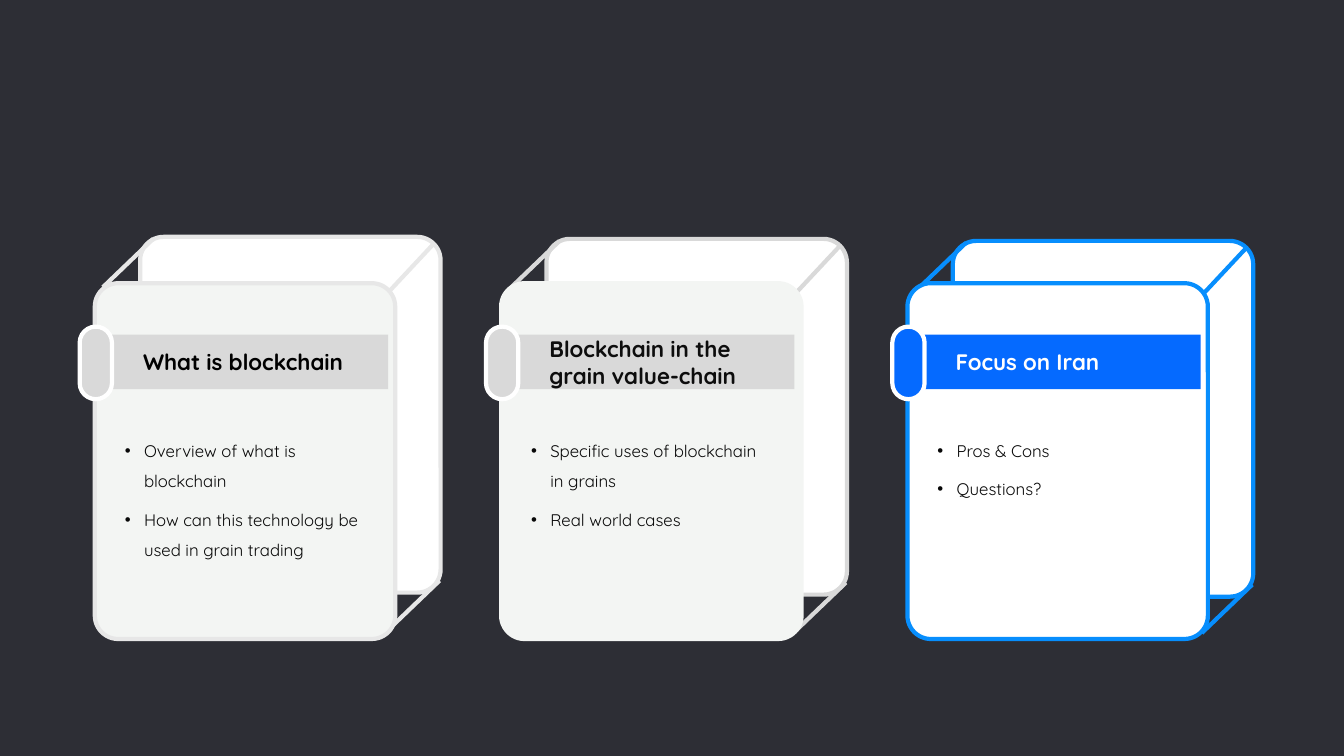
from dataclasses import dataclass

from lxml import etree
from pptx import Presentation
from pptx.dml.color import RGBColor
from pptx.enum.shapes import MSO_CONNECTOR, MSO_SHAPE
from pptx.enum.text import MSO_ANCHOR, MSO_AUTO_SIZE, PP_ALIGN
from pptx.oxml.ns import qn
from pptx.util import Inches, Pt

RECT = MSO_SHAPE.RECTANGLE
ROUNDED = MSO_SHAPE.ROUNDED_RECTANGLE
STRAIGHT = MSO_CONNECTOR.STRAIGHT
MIDDLE = MSO_ANCHOR.MIDDLE
GROW = MSO_AUTO_SIZE.SHAPE_TO_FIT_TEXT
LEFT = PP_ALIGN.LEFT

BACKGROUND = RGBColor(0x2D, 0x2E, 0x35)
WHITE = RGBColor(0xFF, 0xFF, 0xFF)
BLACK = RGBColor(0x00, 0x00, 0x00)
NEAR_BLACK = RGBColor(0x0D, 0x0D, 0x0D)
BODY_TEXT = RGBColor(0x08, 0x08, 0x08)
PALE = RGBColor(0xF3, 0xF5, 0xF3)
LIGHT_GREY = RGBColor(0xE7, 0xE7, 0xE7)
GREY = RGBColor(0xD9, 0xD9, 0xD9)
SKY_BLUE = RGBColor(0x07, 0x8E, 0xFD)
BLUE = RGBColor(0x05, 0x6A, 0xFF)

FONT = "Quicksand"
CARD_LEFT, CARD_TOP, CARD_PITCH = 0.94, 2.81, 4.03
CARD_W, CARD_H = 2.98, 3.53
BACK_DX = 0.45
# Depth edges, relative to the back panel
DEPTH_EDGES = [(-0.37, 0.5, 0.13, 0.02),
               (2.48, 0.53, 2.91, 0.07),
               (2.47, 3.89, 2.97, 3.41)]


@dataclass
class Card:
    title: str
    bullets: list
    back_top: float
    back_line: RGBColor
    front_fill: RGBColor
    front_line: RGBColor
    accent: RGBColor
    title_color: RGBColor
    title_size: tuple
    body_size: tuple


CARDS = [
    Card("What is blockchain",
         ["Overview of what is blockchain",
          "How can this technology be used in grain trading"],
         2.35, LIGHT_GREY, PALE, LIGHT_GREY, GREY, BLACK,
         (2.45, 0.37), (2.52, 1.36)),
    Card("Blockchain in the grain value-chain",
         ["Specific uses of blockchain in grains", "Real world cases"],
         2.37, GREY, PALE, PALE, GREY, NEAR_BLACK,
         (2.39, 0.64), (2.57, 1.06)),
    Card("Focus on Iran",
         ["Pros & Cons", "Questions?"],
         2.39, SKY_BLUE, WHITE, SKY_BLUE, BLUE, WHITE,
         (2.09, 0.37), (2.26, 0.75)),
]


def add_box(s, kind, x, y, w, h, fill, line=None, radius=None):
    sp = s.shapes.add_shape(kind, Inches(x), Inches(y), Inches(w), Inches(h))
    sp.shadow.inherit = False
    sp.fill.solid()
    sp.fill.fore_color.rgb = fill
    if line is None:
        sp.line.fill.background()
    else:
        sp.line.color.rgb = line
        sp.line.width = Pt(3)
    if radius is not None:
        sp.adjustments[0] = radius


def add_edge(s, x1, y1, x2, y2, color):
    edge = s.shapes.add_connector(STRAIGHT, Inches(x1), Inches(y1),
                                  Inches(x2), Inches(y2))
    edge.line.color.rgb = color
    edge.line.width = Pt(3)
    etree.SubElement(edge._element.spPr, qn("a:effectLst"))


def add_text(s, x, y, w, h, lines, size, color, bold=False, bullets=False):
    sp = s.shapes.add_textbox(Inches(x), Inches(y), Inches(w), Inches(h))
    tf = sp.text_frame
    tf.word_wrap = True
    tf.auto_size = GROW
    if not bullets:
        tf.vertical_anchor = MIDDLE
    for i, line in enumerate(lines):
        p = tf.add_paragraph() if i else tf.paragraphs[0]
        p.text = line
        p.alignment = LEFT
        p.font.name = FONT
        p.font.size = Pt(size)
        p.font.bold = bold
        p.font.color.rgb = color
        if bullets:
            add_bullet(p)


def add_bullet(p):
    p.line_spacing = 1.5
    p.space_after = Pt(6)
    pPr = p._p.get_or_add_pPr()
    pPr.set("marL", str(Inches(0.19)))
    pPr.set("indent", str(-Inches(0.19)))
    bullet_font = etree.Element(qn("a:buFont"), typeface="Arial")
    bullet = etree.Element(qn("a:buChar"), char="•")
    spacing_after = pPr.find(qn("a:spcAft"))
    spacing_after.addnext(bullet_font)
    bullet_font.addnext(bullet)


def add_card(s, x, y, card):
    # Back panel and depth edges
    back_x, back_y = x + BACK_DX, card.back_top
    add_box(s, ROUNDED, back_x, back_y, CARD_W, CARD_H, WHITE,
            card.back_line, 0.078)
    for x1, y1, x2, y2 in DEPTH_EDGES:
        add_edge(s, back_x + x1, back_y + y1, back_x + x2, back_y + y2,
                 card.back_line)

    # Front panel and title band
    add_box(s, ROUNDED, x, y, CARD_W, CARD_H, card.front_fill,
            card.front_line, 0.078)
    add_box(s, RECT, x + 0.15, y + 0.51, 2.76, 0.54, card.accent)

    # Bullets and title, the title centred on the band
    add_text(s, x + 0.2, y + 1.41, *card.body_size, card.bullets, 12,
             BODY_TEXT, bullets=True)
    title_w, title_h = card.title_size
    add_text(s, x + 0.38, y + 0.78 - title_h / 2, title_w, title_h,
             [card.title], 16, card.title_color, bold=True)

    # Clip on the left edge
    add_box(s, ROUNDED, x - 0.15, y + 0.43, 0.32, 0.72, card.accent,
            WHITE, 0.5)


def main():
    prs = Presentation()
    prs.slide_width = Inches(13.33)
    prs.slide_height = Inches(7.5)
    s = prs.slides.add_slide(prs.slide_layouts[6])
    s.background.fill.solid()
    s.background.fill.fore_color.rgb = BACKGROUND
    for i, card in enumerate(CARDS):
        add_card(s, CARD_LEFT + i * CARD_PITCH, CARD_TOP, card)
    prs.save("out.pptx")


if __name__ == "__main__":
    main()
